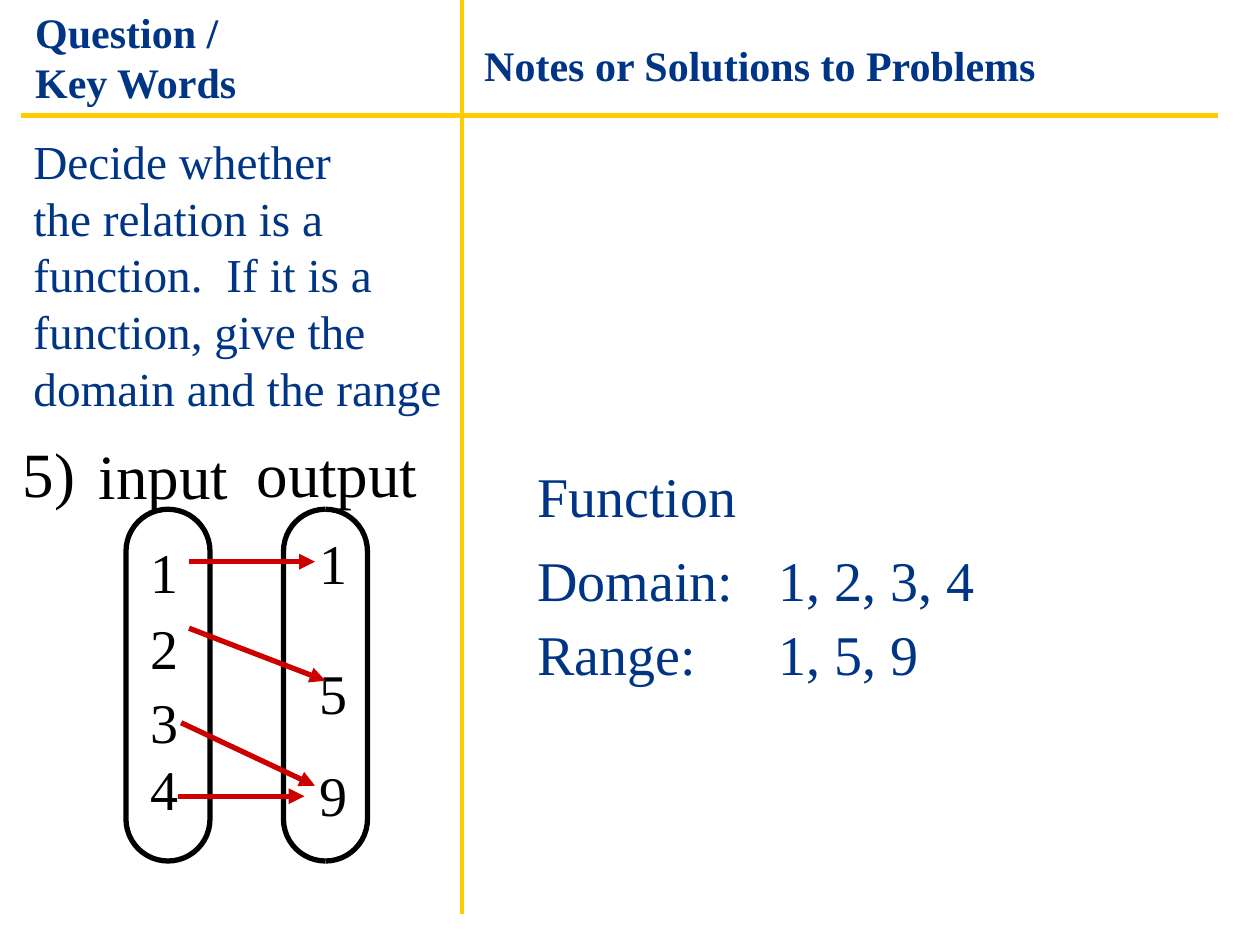
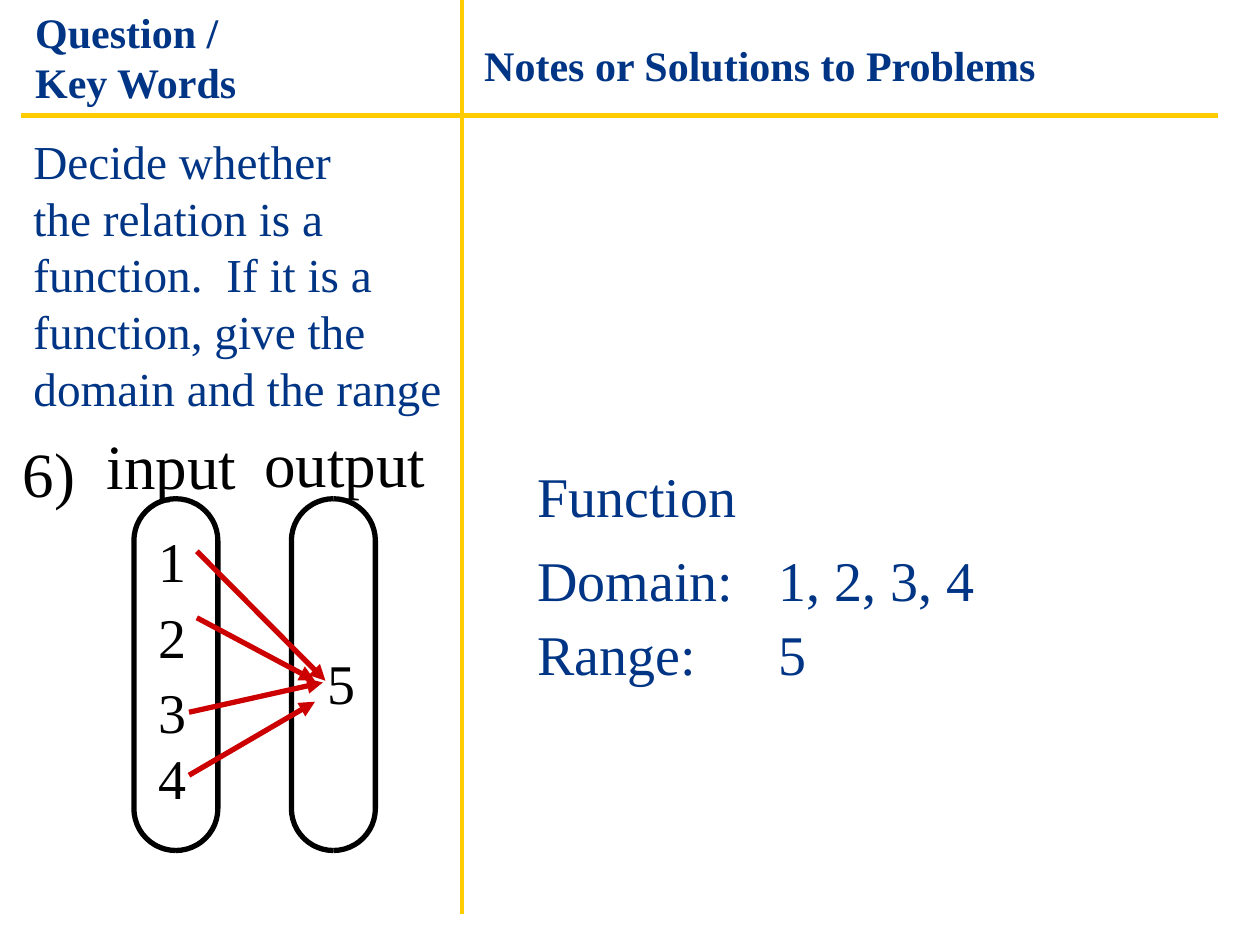
from dataclasses import dataclass

import pptx
import pptx.dml.color
import pptx.enum.shapes
import pptx.enum.text
import pptx.oxml
import pptx.oxml.ns
import pptx.util

Pt = pptx.util.Pt
RGB = pptx.dml.color.RGBColor.from_string


@dataclass(frozen=True)
class Theme:
    font: str = "Times New Roman"
    blue: str = "003585"
    black: str = "000000"
    red: str = "CC0000"
    yellow: str = "FFCC00"
    heading: int = 24
    body: int = 27
    answer: int = 32
    label: int = 36
    rule: float = 2.75
    stroke: float = 3


THEME = Theme()

KEY_WORDS = ["Question /", "Key Words"]
NOTES_TITLE = "Notes or Solutions to Problems"
TASK = ["Decide whether", "the relation is a", "function.  If it is a",
        "function, give the", "domain and the range"]
RULES = [((264, 522), (264, 0)), ((12, 66), (696, 66))]

# Values, tops and arrow ends are measured from the top left of the input set.
INPUTS = [("1", 12.5), ("2", 56), ("3", 98.5), ("4", 136.5)]
PROBLEMS = [
    {
        "number": "5)",
        "origin": (72, 291),
        "outputs": [("1", 7.5), ("5", 82), ("9", 140)],
        "arrows": [((36, 30), (108, 30)), ((36, 68), (114, 98)),
                   ((31.5, 122), (108, 158)), ((30, 164), (102, 164))],
        "verdict": "Function",
        "domain": ("1, 2, 3, 4", 128),
        "range": ("1, 5, 9", 96),
    },
    {
        "number": "6)",
        "origin": (76.5, 285),
        "outputs": [("5", 82)],
        "arrows": [((36, 30), (109.5, 104)), ((36, 68), (103.5, 104)),
                   ((31.5, 122), (108, 105)), ((31.5, 158), (103.5, 116))],
        "verdict": "Function",
        "domain": ("1, 2, 3, 4", 128),
        "range": ("5", 31),
    },
]

SET_WIDTH, SET_HEIGHT, SET_STEP = 48, 201, 90
DIGIT_WIDTH, ANSWER_HEIGHT, LABEL_HEIGHT = 31, 45.5, 50.5
ANSWER_LEFT, VALUE_LEFT = 300, 437.75


def write(sp, lines, size, color, bold=False):
    tf = sp.text_frame
    tf.word_wrap = False
    tf.auto_size = pptx.enum.text.MSO_AUTO_SIZE.SHAPE_TO_FIT_TEXT
    tf.vertical_anchor = pptx.enum.text.MSO_ANCHOR.TOP
    tf.text = "\n".join(lines)
    for p in tf.paragraphs:
        p.alignment = pptx.enum.text.PP_ALIGN.LEFT
        for r in p.runs:
            r.font.name = THEME.font
            r.font.size = Pt(size)
            r.font.bold = bold
            r.font.color.rgb = RGB(color)


def add_text(s, lines, box, size, color, bold=False):
    write(s.shapes.add_textbox(*map(Pt, box)), lines, size, color, bold)


def add_line(s, start, end, color, width, arrow=False):
    line = s.shapes.add_connector(pptx.enum.shapes.MSO_CONNECTOR.STRAIGHT,
                                  *map(Pt, start + end))
    line.line.color.rgb = RGB(color)
    line.line.width = Pt(width)
    props = line.element.spPr
    namespace = pptx.oxml.ns.nsdecls("a")
    if arrow:
        props.find(pptx.oxml.ns.qn("a:ln")).append(
            pptx.oxml.parse_xml(f'<a:tailEnd {namespace} type="triangle"/>'))
    props.append(pptx.oxml.parse_xml(f"<a:effectLst {namespace}/>"))


def add_frame(s):
    """Draw the note-page headings, rules and task shared by the slides."""
    for start, end in RULES:
        add_line(s, start, end, THEME.yellow, THEME.rule)
    title = s.shapes.title
    title.left, title.top, title.width, title.height = map(
        Pt, (269.5, 19, 331, 36))
    write(title, [NOTES_TITLE], THEME.heading, THEME.blue, True)
    add_text(s, KEY_WORDS, (13, 0, 131, 65), THEME.heading, THEME.blue, True)
    add_text(s, TASK, (12, 72, 248, 169), THEME.body, THEME.blue)


def add_mapping(s, problem):
    x, y = problem["origin"]
    add_text(s, [problem["number"]], (6, 245, 45, 51),
             THEME.label, THEME.black)
    sets = [("input", -22.5, -45, 89, 7, INPUTS),
            ("output", 67.5, -46, 107, 103.5, problem["outputs"])]
    for i, (label, dx, dy, width, digit_dx, digits) in enumerate(sets):
        add_text(s, [label], (x + dx, y + dy, width, LABEL_HEIGHT),
                 THEME.label, THEME.black)
        outline = s.shapes.add_shape(
            pptx.enum.shapes.MSO_SHAPE.DOUBLE_BRACKET,
            *map(Pt, (x + i * SET_STEP, y, SET_WIDTH, SET_HEIGHT)))
        outline.adjustments[0] = 0.5
        outline.shadow.inherit = False
        outline.fill.background()
        outline.line.color.rgb = RGB(THEME.black)
        outline.line.width = Pt(THEME.stroke)
        for digit, top in digits:
            add_text(s, [digit],
                     (x + digit_dx, y + top, DIGIT_WIDTH, ANSWER_HEIGHT),
                     THEME.answer, THEME.black)
    for (x1, y1), (x2, y2) in problem["arrows"]:
        add_line(s, (x + x1, y + y1), (x + x2, y + y2),
                 THEME.red, THEME.stroke, arrow=True)


def add_answer(s, problem):
    domain, domain_width = problem["domain"]
    values, values_width = problem["range"]
    parts = [(problem["verdict"], ANSWER_LEFT, 260, 130),
             ("Domain:", ANSWER_LEFT, 308, 128),
             (domain, VALUE_LEFT, 308, domain_width),
             ("Range:", ANSWER_LEFT, 350.5, 106),
             (values, VALUE_LEFT, 350.5, values_width)]
    for text, left, top, width in parts:
        add_text(s, [text], (left, top, width, ANSWER_HEIGHT),
                 THEME.answer, THEME.blue)


def main():
    prs = pptx.Presentation()
    prs.slide_width, prs.slide_height = Pt(720), Pt(540)
    for problem in PROBLEMS:
        s = prs.slides.add_slide(prs.slide_layouts[5])
        add_frame(s)
        add_mapping(s, problem)
        add_answer(s, problem)
    prs.save("out.pptx")


if __name__ == "__main__":
    main()
